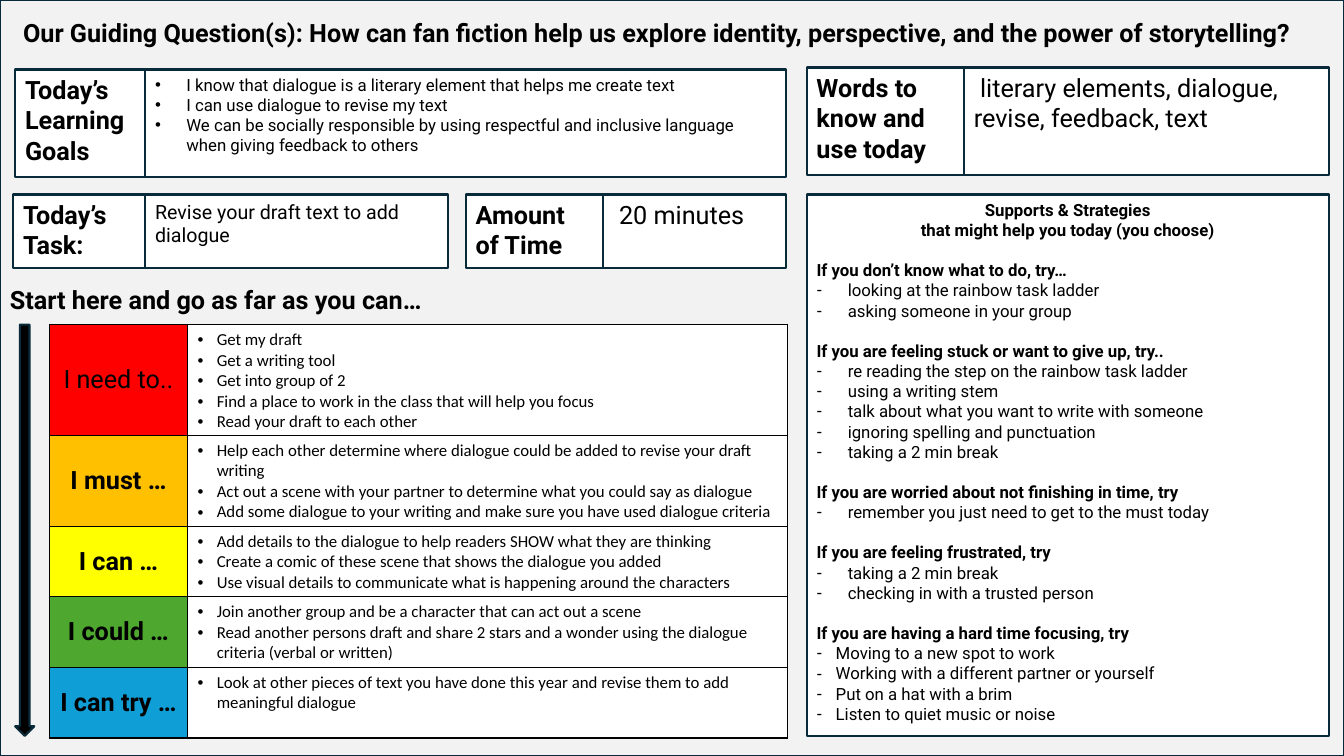
from pptx import Presentation, util as u
from pptx.dml.color import RGBColor
from pptx.enum import shapes, text as t
from pptx.oxml import ns, parse_xml

COLORS = {
    "page": "F2F2F2", "panel": "FFFFFF", "outline": "092A39", "ink": "000000",
    "need": "FF0000", "must": "FFC000", "can": "FFFF00", "could": "4EA72E", "try": "0F9ED5",
}
COLUMNS, ROWS = 133.3, 75  # grid of the whole slide
CELL = u.Inches(0.1)  # side of one grid square
WIDE, NARROW = 0.31, 0.19  # hanging indents in inches

GOALS = [
    "I know that dialogue is a literary element that helps me create text",
    "I can use dialogue to revise my text",
    "We can be socially responsible by using respectful and inclusive language "
    "when giving feedback to others",
]

# Label, colour, row height, bold label, steps
LADDER = [
    ("I need to..", "need", 11, False, [
        "Get my draft", "Get a writing tool", "Get into group of 2",
        "Find a place to work in the class that will help you focus",
        "Read your draft to each other"]),
    ("I must …", "must", 9, True, [
        "Help each other determine where dialogue could be added to revise your draft writing",
        "Act out a scene with your partner to determine what you could say as dialogue",
        "Add some dialogue to your writing and make sure you have used dialogue criteria"]),
    ("I can …", "can", 7, True, [
        "Add details to the dialogue to help readers SHOW what they are thinking",
        "Create a comic of these scene that shows the dialogue you added",
        "Use visual details to communicate what is happening around the characters"]),
    ("I could …", "could", 7, True, [
        "Join another group and be a character that can act out a scene",
        "Read another persons draft and share 2 stars and a wonder using the dialogue "
        "criteria (verbal or written)"]),
    ("I can try …", "try", 7, True, [
        "Look at other pieces of text you have done this year and revise them to add "
        "meaningful dialogue"]),
]

# Heading, hanging indent, strategies
SUPPORTS = [
    ("If you don’t know what to do, try…", WIDE, [
        "looking at the rainbow task ladder", "asking someone in your group"]),
    ("If you are feeling stuck or want to give up, try..", WIDE, [
        "re reading the step on the rainbow task ladder", "using a writing stem",
        "talk about what you want to write with someone",
        "ignoring spelling and punctuation", "taking a 2 min break"]),
    ("If you are worried about not finishing in time, try", WIDE, [
        "remember you just need to get to the must today"]),
    ("If you are feeling frustrated, try", WIDE, [
        "taking a 2 min break", "checking in with a trusted person"]),
    ("If you are having a hard time focusing, try", NARROW, [
        "Moving to a new spot to work", "Working with a different partner or yourself",
        "Put on a hat with a brim", "Listen to quiet music or noise"]),
]


def grid(*lengths):
    return [round(length * CELL) for length in lengths]


def color(name):
    return RGBColor.from_string(COLORS[name])


def write(frame, text, size=18, bold=False, font="Roboto", align=t.PP_ALIGN.LEFT,
          bullet=None, indent=WIDE, before=0):
    """Add one paragraph, using the empty first one if there is no text yet."""
    paragraph = frame.paragraphs[0] if not frame.text else frame.add_paragraph()
    paragraph.alignment = align
    if before:
        paragraph.space_before = u.Pt(before)
    if bullet:
        properties = paragraph._p.get_or_add_pPr()
        properties.set("marL", str(u.Inches(indent)))
        properties.set("indent", str(-u.Inches(indent)))
        properties.append(parse_xml(f'<a:buFont {ns.nsdecls("a")} typeface="Arial"/>'))
        properties.append(parse_xml(f'<a:buChar {ns.nsdecls("a")} char="{bullet}"/>'))
    run = paragraph.add_run()
    run.text = text
    run.font.size, run.font.bold, run.font.name = u.Pt(size), bold, font
    run.font.color.rgb = color("ink")


class Board:
    """Holds the slide and draws its elements in grid units."""

    def __init__(self, presentation):
        presentation.slide_width, presentation.slide_height = grid(COLUMNS, ROWS)
        self.slide = presentation.slides.add_slide(presentation.slide_layouts[6])

    def shape(self, left, top, width, height, fill="panel", kind=shapes.MSO_SHAPE.RECTANGLE):
        shape = self.slide.shapes.add_shape(kind, *grid(left, top, width, height))
        shape.shadow.inherit = False
        shape.fill.solid()
        shape.fill.fore_color.rgb = color(fill)
        shape.line.color.rgb = color("outline")
        shape.line.width = u.Pt(1.5)
        return shape

    def panel(self, left, top, width, height, *lines, **style):
        frame = self.shape(left, top, width, height).text_frame
        frame.word_wrap = True
        frame.vertical_anchor = t.MSO_ANCHOR.TOP
        for line in lines:
            write(frame, line, **style)
        return frame

    def heading(self, left, top, width, text):
        frame = self.slide.shapes.add_textbox(*grid(left, top, width, 4)).text_frame
        frame.word_wrap = True
        frame.auto_size = t.MSO_AUTO_SIZE.SHAPE_TO_FIT_TEXT
        write(frame, text, bold=True)

    def cell(self, cell, fill):
        cell.fill.solid()
        cell.fill.fore_color.rgb = color(fill)
        properties = cell._tc.get_or_add_tcPr()
        for position, side in enumerate("LRTB"):
            properties.insert(position, parse_xml(
                f'<a:ln{side} {ns.nsdecls("a")} w="{u.Pt(1)}"><a:solidFill>'
                f'<a:srgbClr val="{COLORS["ink"]}"/></a:solidFill></a:ln{side}>'))
        return cell.text_frame

    def ladder(self, left, top, widths, steps):
        height = sum(step[2] for step in steps)
        table = self.slide.shapes.add_table(
            len(steps), 2, *grid(left, top, sum(widths), height)).table
        table.first_row = table.horz_banding = False
        for column, width in zip(table.columns, grid(*widths)):
            column.width = width
        for row, (label, fill, row_height, bold, items) in zip(table.rows, steps):
            row.height = grid(row_height)[0]
            name, tasks = row.cells
            name.vertical_anchor = t.MSO_ANCHOR.MIDDLE
            write(self.cell(name, fill), label, bold=bold, align=t.PP_ALIGN.CENTER)
            frame = self.cell(tasks, "panel")
            for item in items:
                write(frame, item, size=12, font="Calibri", bullet="•", indent=NARROW)


def main():
    presentation = Presentation()
    board = Board(presentation)

    # Background and guiding question
    board.shape(0, 0, COLUMNS, ROWS, fill="page")
    board.heading(1.3, 1.2, 130.5, "Our Guiding Question(s): How can fan fiction help us explore "
                  "identity, perspective, and the power of storytelling?")

    # Learning goals and vocabulary
    board.panel(1.5, 6.9, 12.9, 10.7, "Today’s", "Learning", "Goals", bold=True)
    board.panel(14.4, 6.9, 63.6, 10.7, *GOALS, size=12, bullet="•")
    board.panel(80, 6.7, 15.7, 10.7, "Words to know and use today", bold=True)
    board.panel(95.6, 6.7, 36.2, 10.7, " literary elements, dialogue, revise, feedback, text")

    # Task and time
    board.panel(1.3, 19.3, 13.1, 7.3, "Today’s Task:", bold=True)
    board.panel(14.4, 19.3, 30, 7.3, "Revise your draft text to add dialogue", size=14)
    board.panel(46.2, 19.3, 13.7, 7.3, "Amount of Time", bold=True)
    board.panel(59.8, 19.3, 18.2, 7.3, " 20 minutes")

    # Task ladder
    board.heading(0, 27.7, 66.7, "Start here and go as far as you can…")
    board.shape(1.5, 32.2, 1.9, 40.8, fill="ink", kind=shapes.MSO_SHAPE.DOWN_ARROW)
    board.ladder(4.9, 32.2, (13.7, 59.5), LADDER)

    # Supports and strategies
    supports = board.panel(80, 19.3, 51.8, 53.7, "Supports & Strategies",
                           "that might help you today (you choose)",
                           size=12, bold=True, align=t.PP_ALIGN.CENTER)
    for heading, indent, strategies in SUPPORTS:
        write(supports, heading, size=12, bold=True, before=14.4)
        for strategy in strategies:
            write(supports, strategy, size=12, bullet="-", indent=indent)

    presentation.save("out.pptx")


if __name__ == "__main__":
    main()
